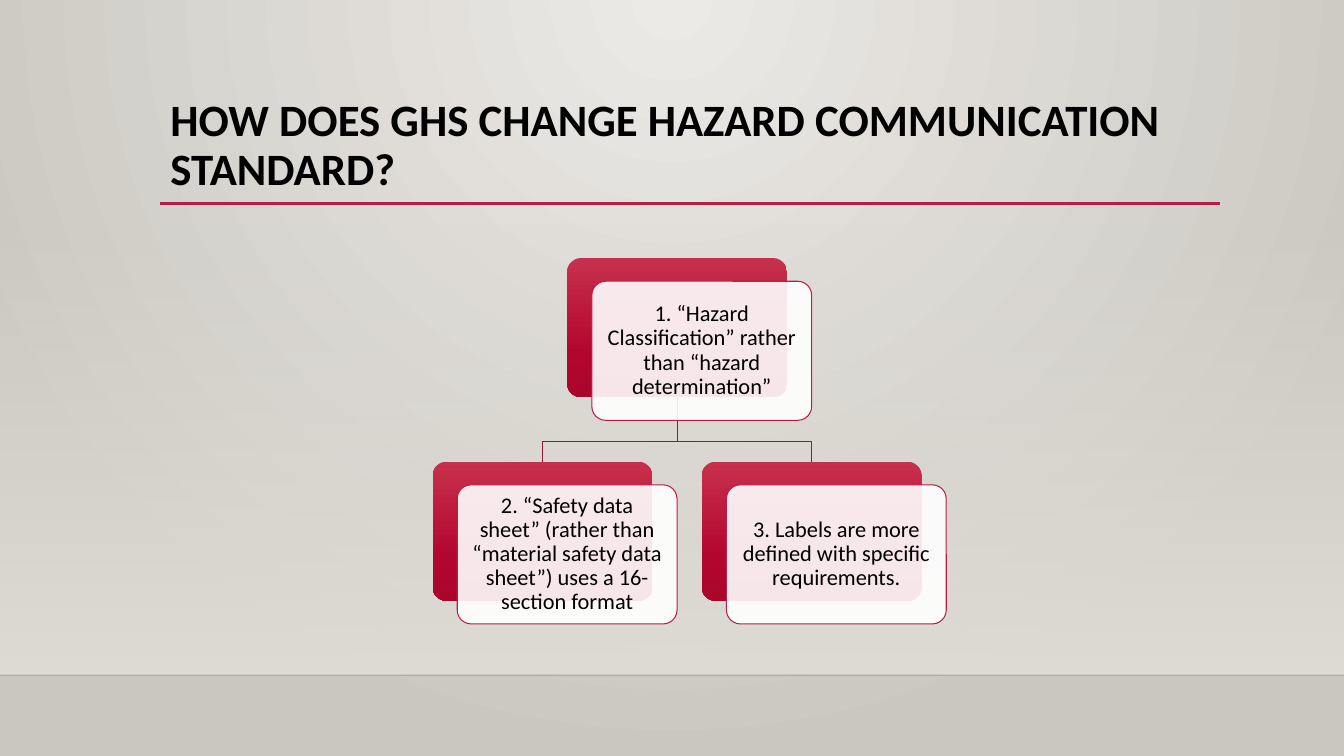
"""Builds the slide on how GHS changes the hazard communication standard."""
from lxml.etree import SubElement
from pptx import Presentation
from pptx.dml.color import RGBColor
from pptx.enum.shapes import MSO_CONNECTOR as Connector, MSO_SHAPE as Shape
from pptx.enum.text import MSO_ANCHOR as Anchor, MSO_AUTO_SIZE as AutoSize, PP_ALIGN as Align
from pptx.oxml import parse_xml
from pptx.oxml.ns import nsdecls, qn
from pptx.util import Inches, Pt

WIDTH, HEIGHT = 13.33, 7.5
GRID_LEFT, GRID_TOP = 4.29, 2.56
COLUMN, ROW = 1.335, 2.02
CARD_WIDTH, CARD_HEIGHT = 2.18, 1.38
SHIFT_X, SHIFT_Y = 0.245, 0.23
FLOOR, RULE = 6.7, 2.02
CRIMSON, BRANCH = "B71E42", "931835"
DOWNWARD = '<a:lin ang="5400000" scaled="0"/>'
SPOTLIGHT = '<a:path path="circle"><a:fillToRect l="43000" r="43000" b="100000"/></a:path>'
CARD_STOPS = [(0, "C7304C", 100), (69, "B3062F", 100), (100, "AA062C", 100)]
CARDS = [
    (1, 0, "1. “Hazard Classification” rather than “hazard determination”"),
    (0, 1, "2. “Safety data sheet” (rather than “material safety data sheet”) uses a 16-section format"),
    (2, 1, "3. Labels are more defined with specific requirements."),
]


def apply(target, values):
    """Set each named attribute on the target."""
    for name, value in values.items():
        setattr(target, name, value)


def color(target, hex_code):
    """Give a color format its RGB value."""
    target.rgb = RGBColor.from_string(hex_code)


def fade(element, percent):
    """Set the opacity of the first solid color inside an element."""
    tone = next(element.iter(qn("a:srgbClr")))
    SubElement(tone, qn("a:alpha"), val=str(percent * 1000))


def shade(fill, element, stops, direction):
    """Replace the fill of an element by a gradient."""
    fill.solid()
    marks = "".join(
        f'<a:gs pos="{place * 1000}"><a:srgbClr val="{tone}">'
        f'<a:alpha val="{opacity * 1000}"/></a:srgbClr></a:gs>'
        for place, tone, opacity in stops
    )
    gradient = parse_xml(
        f'<a:gradFill {nsdecls("a")} rotWithShape="1"><a:gsLst>{marks}</a:gsLst>{direction}</a:gradFill>'
    )
    solid = next(element.iter(qn("a:solidFill")))
    solid.getparent().replace(solid, gradient)


def outline(line, hex_code, points):
    """Set the color and width of a line."""
    color(line.color, hex_code)
    line.width = Pt(points)


def write(frame, text, format_values, paragraph_values, font_values):
    """Write one formatted paragraph in a text frame."""
    apply(frame, {"word_wrap": True, "auto_size": AutoSize.NONE,
                  "vertical_anchor": Anchor.MIDDLE, **format_values})
    para = frame.paragraphs[0]
    apply(para, {"line_spacing": 0.9, **paragraph_values})
    span = para.add_run()
    span.text = text
    apply(span.font, {"name": "Calibri", **font_values})
    color(span.font.color, "000000")


def add_box(page, kind, left, top, width, height):
    """Add a preset shape without shadow or outline."""
    box = page.shapes.add_shape(kind, *map(Inches, (left, top, width, height)))
    box.shadow.inherit = False
    box.line.fill.background()
    return box


def add_rule(page, left, right, level, hex_code, points):
    """Add a horizontal line and return it."""
    rule = page.shapes.add_connector(
        Connector.STRAIGHT, *map(Inches, (left, level, right, level)))
    outline(rule.line, hex_code, points)
    SubElement(rule.element.spPr, qn("a:effectLst"))
    return rule


def card_corner(column, row):
    """Return the left and top of a grid position."""
    return GRID_LEFT + column * COLUMN, GRID_TOP + row * ROW


def add_branch(page, parent, child):
    """Add an elbow line from a parent card down to a child card."""
    (start, top), (end, bottom) = card_corner(*parent), card_corner(*child)
    start, end = start + CARD_WIDTH / 2, end + CARD_WIDTH / 2
    bend = bottom - 0.2
    points = [(start, top + CARD_HEIGHT), (start, bend), (end, bend), (end, bottom)]
    corners = [(Inches(across), Inches(down)) for across, down in points]
    builder = page.shapes.build_freeform(*corners[0])
    builder.add_line_segments(corners[1:], close=False)
    branch = builder.convert_to_shape()
    branch.shadow.inherit = False
    branch.fill.background()
    outline(branch.line, BRANCH, 0.75)


def add_card(page, column, row, text):
    """Add a crimson back plate with a translucent text card in front."""
    left, top = card_corner(column, row)
    back = add_box(page, Shape.ROUNDED_RECTANGLE, left, top, CARD_WIDTH, CARD_HEIGHT)
    shade(back.fill, back.element.spPr, CARD_STOPS, DOWNWARD)
    front = add_box(page, Shape.ROUNDED_RECTANGLE, left + SHIFT_X, top + SHIFT_Y,
                    CARD_WIDTH, CARD_HEIGHT)
    front.fill.solid()
    color(front.fill.fore_color, "FFFFFF")
    fade(front.element.spPr, 90)
    outline(front.line, CRIMSON, 0.75)
    for plate in (back, front):
        plate.adjustments[0] = 0.1
    margins = dict.fromkeys(
        ("margin_left", "margin_right", "margin_top", "margin_bottom"), Inches(0.11))
    write(front.text_frame, text, margins, {"alignment": Align.CENTER}, {"size": Pt(16)})


def add_backdrop(page):
    """Paint the spotlight background, the wall haze and the floor line."""
    shade(page.background.fill, page.element,
          [(0, "ECEAE7", 100), (100, "CAC7C1", 100)], SPOTLIGHT)
    wall = add_box(page, Shape.RECTANGLE, 0, 2.21, WIDTH, FLOOR - 2.21)
    shade(wall.fill, wall.element.spPr, [(0, "DFDBD5", 0), (100, "DFDBD5", 100)], DOWNWARD)
    fade(add_rule(page, 0, WIDTH, FLOOR, "000001", 1).element.spPr, 20)


def add_title(page, text):
    """Place the title and the rule under it."""
    title = page.shapes.title
    apply(title, {"left": Inches(1.59), "top": Inches(0.88),
                  "width": Inches(10.5), "height": Inches(1.15)})
    write(title.text_frame, text, {}, {"alignment": Align.LEFT},
          {"size": Pt(32), "bold": True})
    add_rule(page, 1.59, 12.1, RULE, CRIMSON, 2.5)


def main():
    """Build and save the slide."""
    deck = Presentation()
    apply(deck, {"slide_width": Inches(WIDTH), "slide_height": Inches(HEIGHT)})
    page = deck.slides.add_slide(deck.slide_layouts[5])
    add_backdrop(page)
    add_title(page, "HOW DOES GHS CHANGE HAZARD COMMUNICATION STANDARD?")
    parent, *children = CARDS
    for child in children:
        add_branch(page, parent[:2], child[:2])
    for card in CARDS:
        add_card(page, *card)
    deck.save("out.pptx")


if __name__ == "__main__":
    main()
